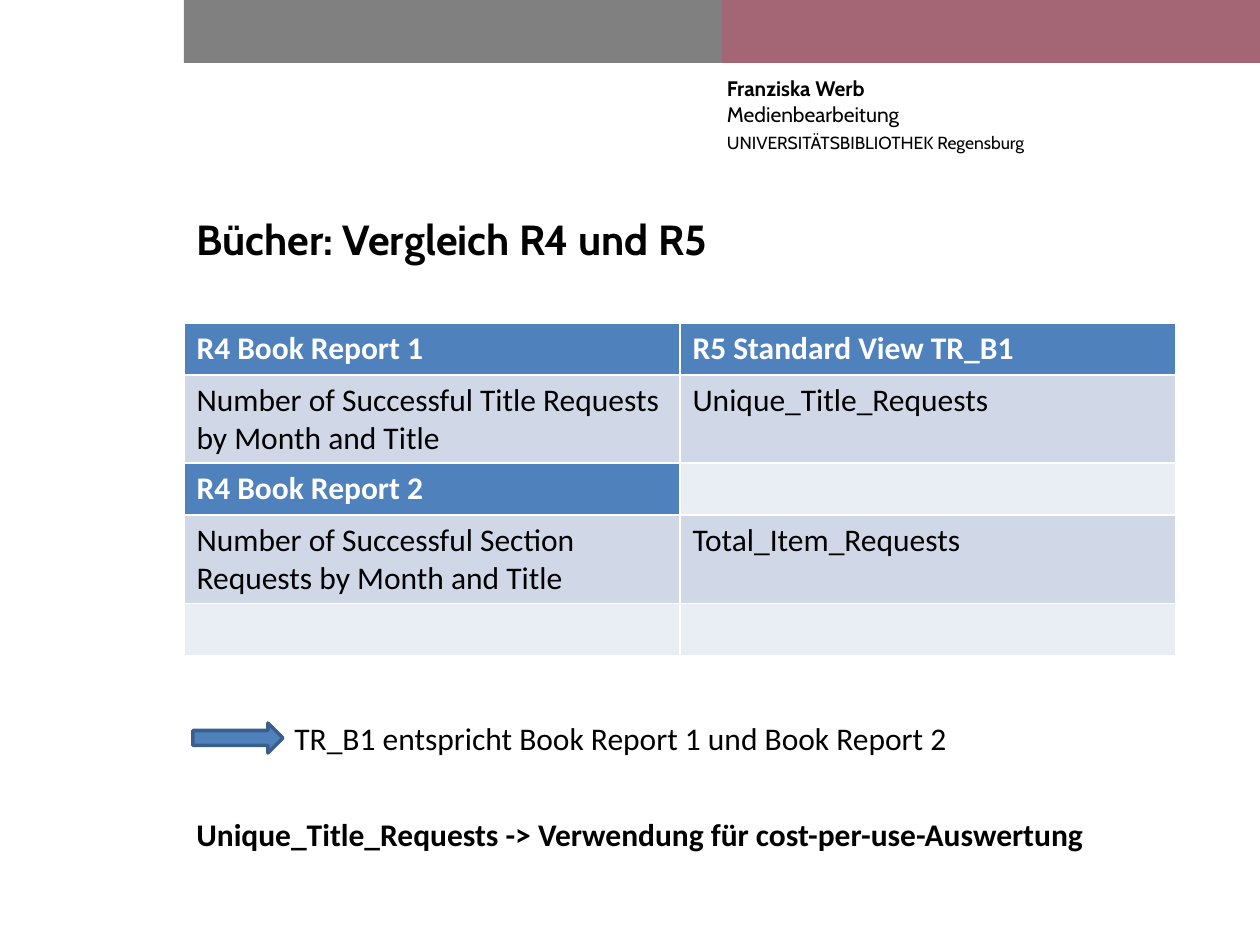
from pptx import Presentation
from pptx.dml.color import RGBColor
from pptx.enum.shapes import MSO_SHAPE
from pptx.enum.text import MSO_ANCHOR, MSO_AUTO_SIZE, PP_ALIGN
from pptx.util import Emu, Pt

COLORS = {
    "black": "000000", "white": "FFFFFF", "gray": "808080", "rose": "A46674",
    "blue": "4F81BD", "edge": "3A5F8C", "band": "D0D8E8", "pale": "E9EDF4",
}
ROWS = [
    ("R4 Book Report 1", "R5 Standard View TR_B1"),
    ("Number of Successful Title Requests by Month and Title",
     "Unique_Title_Requests"),
    ("R4 Book Report 2", ""),
    ("Number of Successful Section Requests by Month and Title",
     "Total_Item_Requests"),
    ("", ""),
]
HEADS = {(0, 0), (0, 1), (2, 0)}


def px(n):
    return Emu(round(n * 914400 / 126))


def rgb(name):
    return RGBColor.from_string(COLORS[name])


def add_run(para, text, size, font="Calibri", color="black", bold=False):
    run = para.add_run()
    run.text = text
    run.font.size = Pt(size)
    run.font.name = font
    run.font.bold = bold
    run.font.color.rgb = rgb(color)


def add_shape(slide, kind, box, fill, edge=None):
    shape = slide.shapes.add_shape(kind, *map(px, box))
    shape.shadow.inherit = False
    shape.fill.solid()
    shape.fill.fore_color.rgb = rgb(fill)
    if edge:
        shape.line.color.rgb = rgb(edge)
        shape.line.width = Pt(2)
    else:
        shape.line.fill.background()


def add_text(slide, box):
    frame = slide.shapes.add_textbox(*map(px, box)).text_frame
    frame.word_wrap = True
    return frame


def add_header(slide, x, y, w, h):
    """Two colour bars with the sender block under the right one."""
    half = w // 2
    bar = h * 2 // 5 - 14
    for i, fill in enumerate(("gray", "rose")):
        add_shape(slide, MSO_SHAPE.RECTANGLE, (x + i * half, y, half, bar), fill)
    frame = add_text(slide, (x + half + 5, y + 76, 509, h - 76))
    frame.margin_left = frame.margin_right = 0
    frame.margin_top = frame.margin_bottom = 0
    name = frame.paragraphs[0]
    add_run(name, "Franziska Werb", 12, "Cabin", bold=True)
    name.add_line_break()
    add_run(name, "Medienbearbeitung", 12, "Cabin")
    unit = frame.add_paragraph()
    add_run(unit, "UNIVERSITÄTSBIBLIOTHEK Regensburg", 10, "Cabin")
    for para in frame.paragraphs:
        para.space_after = Pt(3)


def set_title(slide, x, y, w, h):
    title = slide.shapes.title
    title.left, title.top, title.width, title.height = map(px, (x, y, w, h))
    frame = title.text_frame
    frame.auto_size = MSO_AUTO_SIZE.NONE
    frame.vertical_anchor = MSO_ANCHOR.TOP
    para = frame.paragraphs[0]
    para.alignment = PP_ALIGN.LEFT
    add_run(para, "Bücher: Vergleich R4 und R5", 24, "Cabin", bold=True)


def add_reports(slide, x, y, w, h):
    """Table of R4 reports and their R5 match; wrapped rows grow."""
    box = map(px, (x, y, w, h))
    table = slide.shapes.add_table(len(ROWS), 2, *box).table
    for r, row in enumerate(ROWS):
        for c, text in enumerate(row):
            cell = table.cell(r, c)
            head = (r, c) in HEADS
            cell.fill.solid()
            cell.fill.fore_color.rgb = rgb(
                "blue" if head else "band" if r % 2 else "pale")
            if text:
                add_run(cell.text_frame.paragraphs[0], text, 18,
                        color="white" if head else "black", bold=head)


def add_summary(slide, x, y, w, h):
    """Arrow with the finding, and the bold advice at the foot."""
    finding = add_text(slide, (x + 98, y, w - 98, 50))
    add_run(finding.paragraphs[0],
            "TR_B1 entspricht Book Report 1 und Book Report 2", 18)
    add_shape(slide, MSO_SHAPE.RIGHT_ARROW, (x + 9, y + 10, 90, 30),
              "blue", "edge")
    advice = add_text(slide, (x, y + h - 50, w - 49, 50))
    add_run(advice.paragraphs[0],
            "Unique_Title_Requests -> Verwendung für cost-per-use-Auswertung",
            18, bold=True)


def main():
    deck = Presentation()
    deck.slide_width, deck.slide_height = px(1260), px(945)
    slide = deck.slides.add_slide(deck.slide_layouts[5])
    add_header(slide, 184, 0, 1076, 194)
    set_title(slide, 184, 207, 990, 96)
    add_reports(slide, 184, 323, 992, 260)
    add_summary(slide, 184, 713, 992, 146)
    deck.save("out.pptx")


if __name__ == "__main__":
    main()
